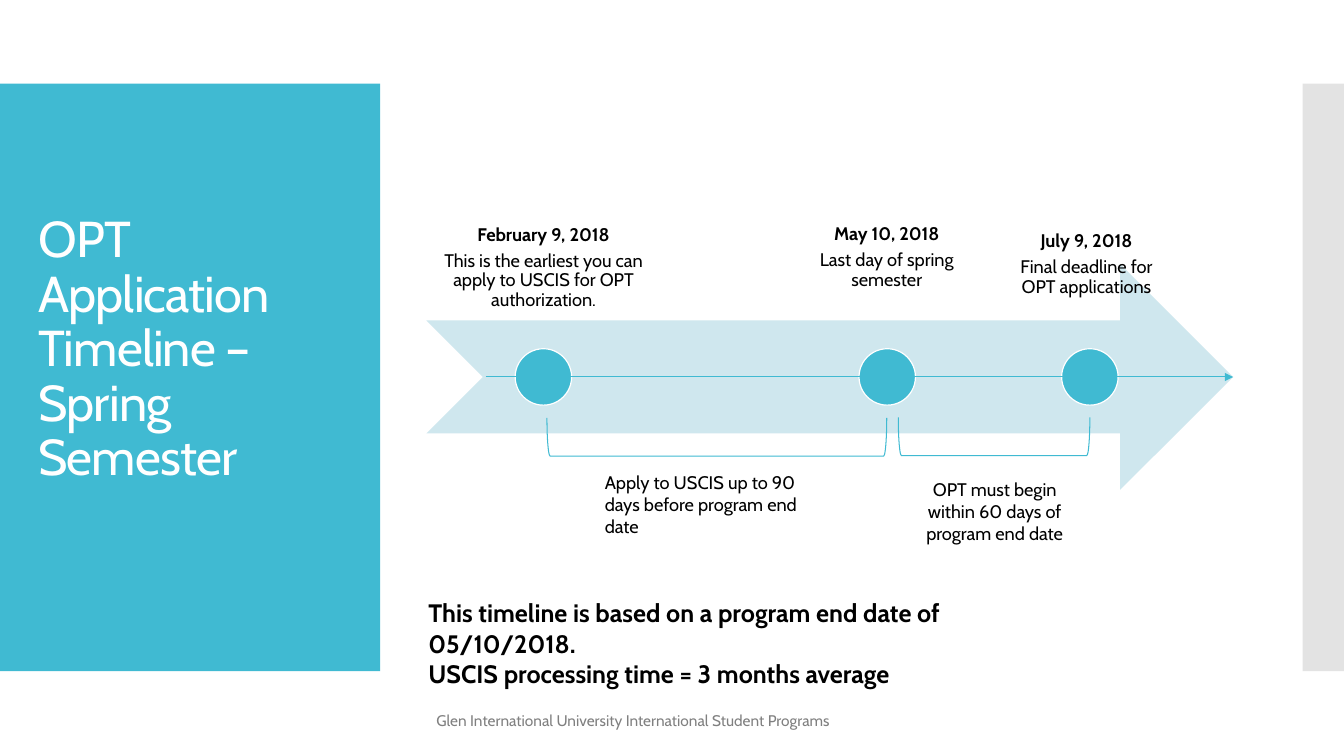
from lxml import etree
from pptx import Presentation
from pptx.dml.color import RGBColor
from pptx.enum.shapes import MSO_CONNECTOR, MSO_SHAPE
from pptx.enum.text import MSO_ANCHOR, PP_ALIGN
from pptx.oxml.ns import qn
from pptx.util import Pt

PX = 9144
TEAL, PALE, WHITE, BLACK, GRAY = "40BAD2", "CFE7EE", "FFFFFF", "000000", "808080"
LEFT, CENTER = PP_ALIGN.LEFT, PP_ALIGN.CENTER
TOP, MIDDLE, BOTTOM = MSO_ANCHOR.TOP, MSO_ANCHOR.MIDDLE, MSO_ANCHOR.BOTTOM
RECTANGLE, OVAL = MSO_SHAPE.RECTANGLE, MSO_SHAPE.OVAL
ARROW, BRACKET = MSO_SHAPE.NOTCHED_RIGHT_ARROW, MSO_SHAPE.LEFT_BRACKET


def add_figure(kind, box, fill=None, line=None, width=0.75):
    shape = slide.shapes.add_shape(kind, *[value * PX for value in box])
    shape.shadow.inherit = False
    if fill:
        shape.fill.solid()
        shape.fill.fore_color.rgb = RGBColor.from_string(fill)
    else:
        shape.fill.background()
    if line:
        shape.line.color.rgb = RGBColor.from_string(line)
        shape.line.width = Pt(width)
    else:
        shape.line.fill.background()
    return shape


def write_text(shape, lines, size, color=BLACK, anchor=TOP, inset=None, **paragraph_format):
    frame = shape.text_frame
    frame.word_wrap = True
    frame.vertical_anchor = anchor
    if inset:
        for side in ("left", "top", "right", "bottom"):
            setattr(frame, f"margin_{side}", inset * PX)
    for index, (text, bold) in enumerate(lines):
        paragraph = frame.add_paragraph() if index else frame.paragraphs[0]
        for name, value in paragraph_format.items():
            setattr(paragraph, name, value)
        run = paragraph.add_run()
        run.text = text
        run.font.color.rgb = RGBColor.from_string(color)
        for name, value in {"name": "Cabin", "size": Pt(size), "bold": bold}.items():
            setattr(run.font, name, value)


presentation = Presentation()
presentation.slide_width, presentation.slide_height = 1333 * PX, 750 * PX
slide = presentation.slides.add_slide(presentation.slide_layouts[5])

add_figure(RECTANGLE, (0, 83, 377, 583), TEAL)
side_bar = add_figure(RECTANGLE, (1292, 83, 41, 583), "C8C8C8")
side_color = side_bar.fill._xPr.find(qn("a:solidFill"))[0]
etree.SubElement(side_color, qn("a:alpha"), val="50000")

title = slide.shapes.title
title.element.getparent().append(title.element)
for name, value in {"left": 28, "top": 123, "width": 322, "height": 503}.items():
    setattr(title, name, value * PX)
write_text(title, [("OPT Application Timeline – Spring Semester", False)], 36, WHITE,
           MIDDLE, alignment=LEFT, line_spacing=0.9)
title.text_frame.margin_bottom = 59 * PX
title.text_frame.paragraphs[0].runs[0].font._element.set("spc", "-60")

add_figure(ARROW, (423, 262, 800, 224), PALE)

milestones = [
    ("February 9, 2018", "This is the earliest you can apply to USCIS for OPT authorization.",
     (423, 94, 232, 224), BOTTOM, 511),
    ("May 10, 2018", "Last day of spring semester", (801, 213, 157, 84), TOP, 852),
    ("July 9, 2018", "Final deadline for OPT applications", (998, 221, 159, 84), BOTTOM, 1053),
]
for date, detail, box, anchor, dot_left in milestones:
    label = slide.shapes.add_textbox(*[value * PX for value in box])
    write_text(label, [(date, True), (detail, False)], 13, anchor=anchor, inset=10,
               alignment=CENTER, line_spacing=0.9, space_after=Pt(4.5))
    add_figure(OVAL, (dot_left, 346, 56, 56), TEAL, WHITE, 0.85)

axis = slide.shapes.add_connector(MSO_CONNECTOR.STRAIGHT, 482 * PX, 374 * PX, 1223 * PX, 374 * PX)
axis.line.color.rgb = RGBColor.from_string(TEAL)
axis.line.width = Pt(0.75)
etree.SubElement(axis.line._get_or_add_ln(), qn("a:tailEnd"), type="triangle")
etree.SubElement(axis.element.spPr, qn("a:effectLst"))

for box in ((967, 338, 38, 190), (692, 265, 38, 337)):
    add_figure(BRACKET, box, line=TEAL).rotation = 270

notes = [
    ([("Glen International University International Student Programs", False)],
     (423, 695, 646, 40), 11, GRAY, MIDDLE, LEFT),
    ([("This timeline is based on a program end date of 05/10/2018.", True),
      ("USCIS processing time = 3 months average", True)],
     (415, 588, 662, 71), 18, BLACK, TOP, LEFT),
    ([("OPT must begin within 60 days of program end date", False)],
     (891, 470, 191, 106), 13, BLACK, TOP, CENTER),
    ([("Apply to USCIS up to 90 days before program end date", False)],
     (590, 463, 241, 54), 13, BLACK, TOP, LEFT),
]
for lines, box, size, color, anchor, alignment in notes:
    note = slide.shapes.add_textbox(*[value * PX for value in box])
    write_text(note, lines, size, color, anchor, alignment=alignment)

presentation.save("out.pptx")
